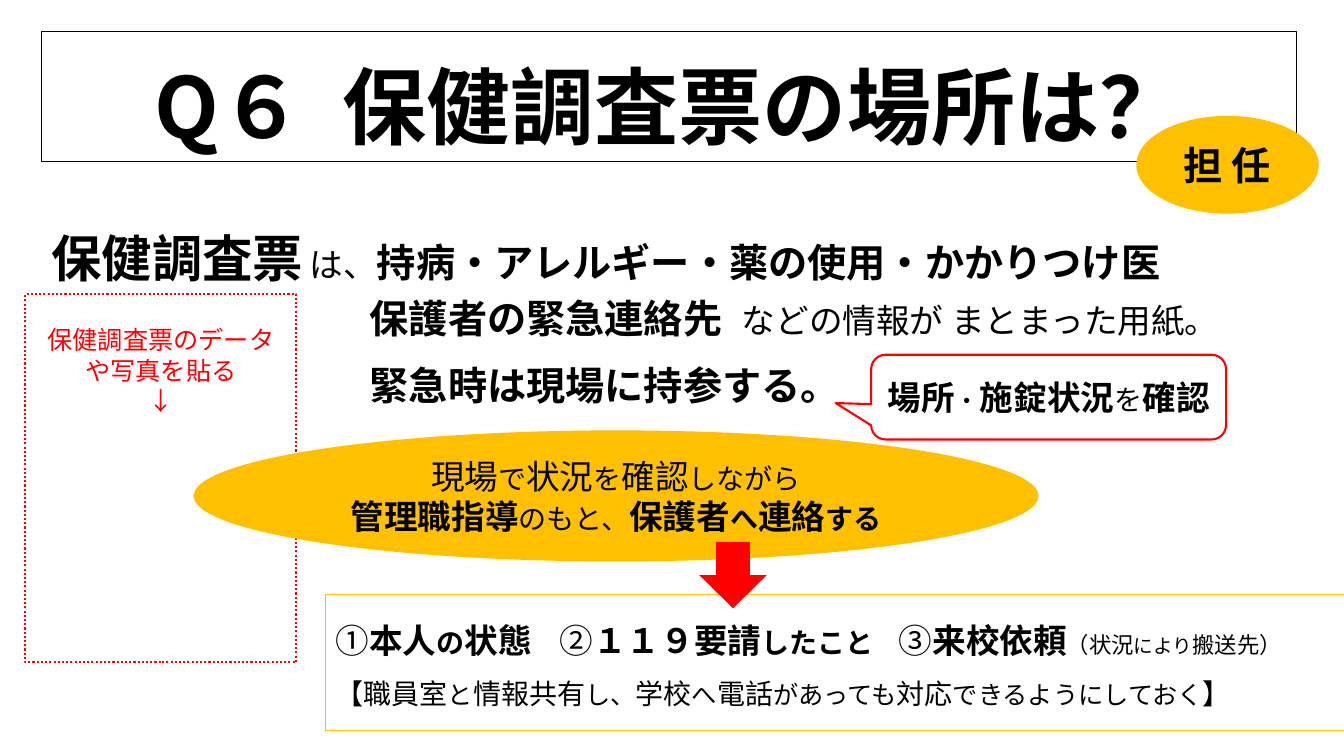
from lxml.etree import SubElement
from pptx import Presentation
from pptx.dml.color import RGBColor
from pptx.enum.dml import MSO_LINE
from pptx.enum.shapes import MSO_SHAPE
from pptx.enum.text import MSO_ANCHOR, PP_ALIGN
from pptx.oxml.ns import qn
from pptx.util import Inches, Pt

GOTHIC = "Noto Sans CJK JP"
SERIF = "Times New Roman"
COLORS = {"black": "000000", "red": "FF0000", "gold": "FFC000", "white": "FFFFFF"}


def rgb(name):
    return RGBColor.from_string(COLORS[name])


def add_shape(page, kind, left, top, width, height, fill=None, line=None, weight=1):
    shape = page.shapes.add_shape(
        kind, Inches(left), Inches(top), Inches(width), Inches(height))
    shape.shadow.inherit = False
    if fill:
        shape.fill.solid()
        shape.fill.fore_color.rgb = rgb(fill)
    else:
        shape.fill.background()
    if line:
        shape.line.color.rgb = rgb(line)
        shape.line.width = Pt(weight)
    else:
        shape.line.fill.background()
    return shape


def add_span(para, text, size, bold=False, color="black", latin=GOTHIC):
    span = para.add_run()
    span.text = text
    span.font.size = Pt(size)
    span.font.bold = bold
    span.font.color.rgb = rgb(color)
    span.font.name = latin
    # Japanese characters take the East Asian font
    SubElement(span.font._element, qn("a:ea"), typeface=GOTHIC)


def write(box, paragraphs, align=PP_ALIGN.CENTER, anchor=MSO_ANCHOR.MIDDLE, **style):
    """Each paragraph is a list of (text, size[, bold]) spans."""
    frame = box.text_frame
    frame.word_wrap = True
    frame.vertical_anchor = anchor
    for index, spans in enumerate(paragraphs):
        para = frame.add_paragraph() if index else frame.paragraphs[0]
        para.alignment = align
        for span in spans:
            add_span(para, *span, **style)
    return frame


def add_title(page):
    box = add_shape(page, MSO_SHAPE.RECTANGLE, 0.41, 0.31, 12.45, 1.29,
                    line="black", weight=0.75)
    frame = write(box, [[("Q６", 60, True), ("　", 28, True),
                         ("保健調査票の場所は？", 60, True)]],
                  anchor=MSO_ANCHOR.BOTTOM)
    frame.paragraphs[0].line_spacing = 0.9


def add_paste_area(page):
    box = add_shape(page, MSO_SHAPE.RECTANGLE, 0.25, 2.92, 2.69, 3.65,
                    line="red", weight=1.5)
    box.line.dash_style = MSO_LINE.ROUND_DOT
    frame = write(box, [[("保健調査票のデータや写真を貼る", 18)], [("↓", 18)]],
                  anchor=MSO_ANCHOR.TOP, color="red")
    frame.margin_top = Inches(0.3)


def add_description(page):
    box = page.shapes.add_textbox(
        Inches(0.41), Inches(2.08), Inches(12.32), Inches(2.28))
    frame = write(box, [
        [("保健調査票", 36, True), (" ", 20, True), ("は、", 24),
         ("持病・アレルギー・薬の使用・かかりつけ医", 28, True)],
        [("保護者の緊急連絡先", 28, True), ("　", 14),
         ("などの情報が まとまった用紙。", 24)],
        [("緊急時は現場に持参する。", 28, True)],
    ], align=PP_ALIGN.LEFT, anchor=MSO_ANCHOR.TOP)
    first, *others = frame.paragraphs
    first.line_spacing = 1.2
    for para, spacing in zip(others, (28.8, 38)):
        para.line_spacing = Pt(spacing)
        para.space_before = Pt(10)
        properties = para._p.get_or_add_pPr()
        properties.set("marL", str(Inches(3.16)))
        properties.set("indent", "0")


def add_contact_steps(page):
    box = add_shape(page, MSO_SHAPE.RECTANGLE, 3.23, 5.9, 10.11, 1.35,
                    fill="white", line="gold")
    frame = write(box, [
        [("①", 24), ("本人", 24, True), ("の", 20, True), ("状態", 24, True),
         ("　", 20, True), ("②", 24), ("１１９要請", 24, True),
         ("したこと", 20, True), ("　", 18, True), ("③", 24),
         ("来校依頼", 24, True), ("（状況", 16), ("により", 14), ("搬送先）", 16)],
        [("【職員室", 20), ("と", 18), ("情報共有", 20), ("し、", 18),
         ("学校", 20), ("へ", 18), ("電話", 20), ("があっても", 18),
         ("対応", 20), ("できるようにしておく", 18), ("】", 20)],
    ], align=PP_ALIGN.JUSTIFY, anchor=MSO_ANCHOR.TOP, latin=SERIF)
    for para in frame.paragraphs:
        para.line_spacing = 1.5


def main():
    deck = Presentation()
    deck.slide_width, deck.slide_height = Inches(13.33), Inches(7.5)
    page = deck.slides.add_slide(deck.slide_layouts[6])

    add_paste_area(page)
    add_title(page)
    add_description(page)

    # Person in charge
    badge = add_shape(page, MSO_SHAPE.OVAL, 11.27, 1.15, 1.81, 0.97, fill="gold")
    write(badge, [[("担 任", 28, True)]])

    # Call to the guardians
    call = add_shape(page, MSO_SHAPE.OVAL, 1.92, 4.27, 8.38, 1.3, fill="gold")
    write(call, [
        [("現場", 24), ("で", 20), ("状況", 24), ("を", 20), ("確認", 24),
         ("しながら", 20)],
        [("管理職指導", 24, True), ("のもと、", 20), ("保護者", 24, True),
         ("へ", 20, True), ("連絡", 24, True), ("する", 20, True)],
    ])

    # Reminder callout
    reminder = add_shape(page, MSO_SHAPE.ROUNDED_RECTANGULAR_CALLOUT,
                         8.64, 3.52, 3.52, 0.84, fill="white", line="red", weight=1.5)
    for index, value in enumerate((-0.6, 0.07, 0.17)):
        reminder.adjustments[index] = value
    write(reminder, [[("場所", 24, True), ("・", 18), ("施錠状況", 24, True),
                      ("を", 20), ("確認", 24, True)]])

    # What to tell them
    add_contact_steps(page)
    arrow = add_shape(page, MSO_SHAPE.RIGHT_ARROW, 6.94, 5.37, 0.66, 0.67, fill="red")
    arrow.rotation = 90

    deck.save("out.pptx")


if __name__ == "__main__":
    main()
